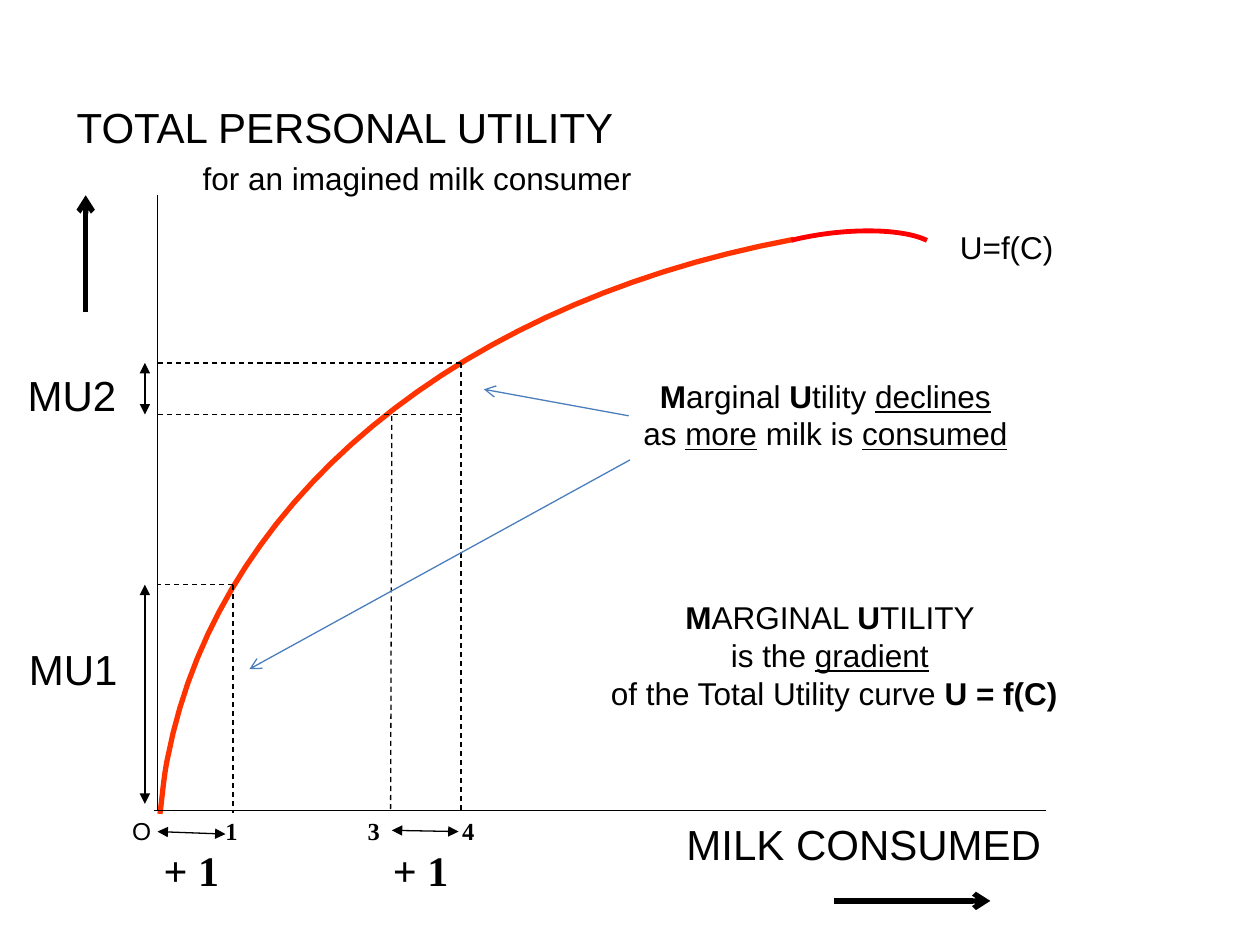
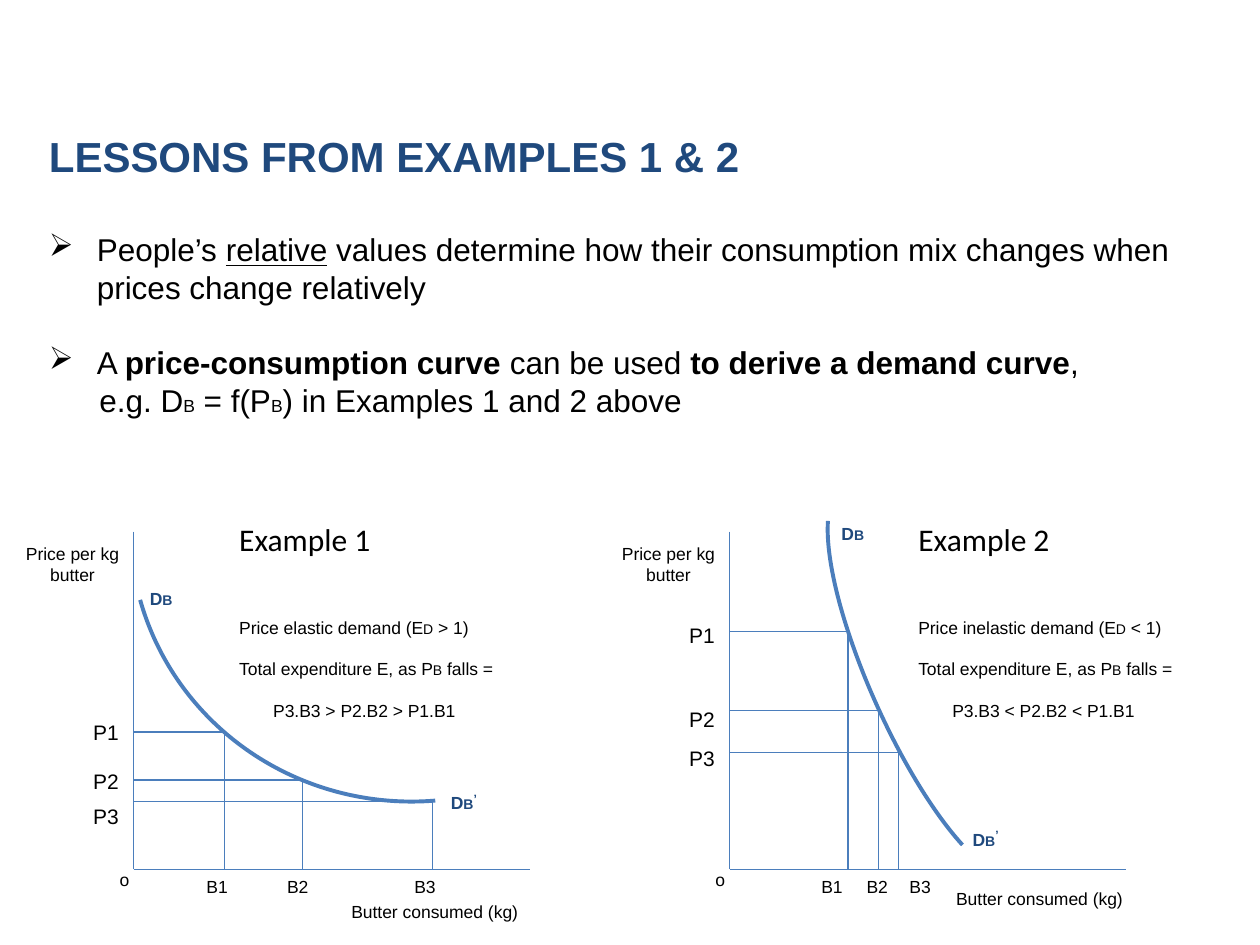
from lxml import etree
from pptx import Presentation
from pptx import util as u
from pptx.dml.color import RGBColor
from pptx.enum import dml, shapes, text
from pptx.oxml import ns

COLUMNS, ROWS = 100, 75
BLACK, NAVY, BLUE = "000000", "1F497D", "4B7EBC"
ORANGE, RED = "FF3300", "FF0000"
SERIF = "Times New Roman"
MARKS = "*_~^"


def color(value):
    return RGBColor.from_string(value)


def split_markup(markup):
    active, piece, pieces = set(), "", []
    for letter in markup:
        if letter in MARKS:
            if piece:
                pieces.append((piece, frozenset(active)))
            active ^= {letter}
            piece = ""
        else:
            piece += letter
    if piece:
        pieces.append((piece, frozenset(active)))
    return pieces


def bezier(start, first, second, end, steps=30):
    points = start, first, second, end
    for step in range(1, steps + 1):
        t = step / steps
        weights = (1 - t) ** 3, 3 * t * (1 - t) ** 2, 3 * t * t * (1 - t), t ** 3
        yield tuple(sum(w * p[axis] for w, p in zip(weights, points)) for axis in (0, 1))


class Canvas:
    def __init__(self, presentation):
        self.presentation = presentation
        self.column = presentation.slide_width / COLUMNS
        self.row = presentation.slide_height / ROWS
        self.font = "Arial"
        self.thin = 0.75
        self.slide = None

    def new_slide(self):
        self.slide = self.presentation.slides.add_slide(self.presentation.slide_layouts[6])

    def place(self, x, y):
        return round(x * self.column), round(y * self.row)

    def line(self, start, end, tint=BLACK, width=None, dashed=False, head=None, tail=None):
        connector = self.slide.shapes.add_connector(
            shapes.MSO_CONNECTOR.STRAIGHT, *self.place(*start), *self.place(*end))
        self.outline(connector, tint, width or self.thin)
        if dashed:
            connector.line.dash_style = dml.MSO_LINE.DASH
        properties = connector._element.spPr
        stroke = properties.find(ns.qn("a:ln"))
        for tag, kind in (("a:headEnd", head), ("a:tailEnd", tail)):
            if kind:
                etree.SubElement(stroke, ns.qn(tag), type=kind)
        etree.SubElement(properties, ns.qn("a:effectLst"))

    def outline(self, shape, tint, width):
        shape.line.color.rgb = color(tint)
        shape.line.width = u.Pt(width)

    def stroke_only(self, shape, tint, width):
        shape.shadow.inherit = False
        shape.fill.background()
        self.outline(shape, tint, width)

    def arc(self, x, y, wide, high, angles, rotation, tint, width, flipped=False):
        shape = self.slide.shapes.add_shape(
            shapes.MSO_SHAPE.ARC, *self.place(x, y), *self.place(wide, high))
        for index, angle in enumerate(angles):
            shape.adjustments[index] = angle * 0.6
        shape.rotation = rotation
        if flipped:
            shape._element.spPr.find(ns.qn("a:xfrm")).set("flipH", "1")
        self.stroke_only(shape, tint, width)

    def curve(self, start, segments, tint, width):
        builder = self.slide.shapes.build_freeform(*self.place(*start))
        for segment in segments:
            points = [self.place(*point) for point in bezier(start, *segment)]
            builder.add_line_segments(points, close=False)
            start = segment[-1]
        self.stroke_only(builder.convert_to_shape(), tint, width)

    def label(self, x, y, wide, high, *markups, size=10, small=8, tint=BLACK, font=None,
              bold=False, centered=False, wrap=False):
        box = self.slide.shapes.add_textbox(*self.place(x, y), *self.place(wide, high))
        frame = box.text_frame
        frame.word_wrap = wrap
        frame.auto_size = text.MSO_AUTO_SIZE.SHAPE_TO_FIT_TEXT
        for index, markup in enumerate(markups):
            paragraph = frame.add_paragraph() if index else frame.paragraphs[0]
            if centered:
                paragraph.alignment = text.PP_ALIGN.CENTER
            self.add_runs(paragraph, markup, size, small, tint, font or self.font, bold)
        return frame.paragraphs

    def add_runs(self, paragraph, markup, size, small, tint, font, bold):
        for piece, marks in split_markup(markup):
            run = paragraph.add_run()
            run.text = piece
            run.font.name = font
            run.font.size = u.Pt(small if "~" in marks else 12 if "^" in marks else size)
            run.font.bold = bold or "*" in marks
            run.font.underline = "_" in marks
            run.font.color.rgb = color(tint)
            if "^" in marks:
                run.font._element.set("baseline", "30000")

    def indent(self, paragraph, left, first=0, bullet=None):
        properties = paragraph._p.get_or_add_pPr()
        properties.set("marL", str(round(left * self.column)))
        properties.set("indent", str(round(first * self.column)))
        if bullet:
            etree.SubElement(properties, ns.qn("a:buChar"), char=bullet)


def draw_utility_slide(canvas):
    canvas.new_slide()
    axis_x, axis_y = 12.5, 64.3
    canvas.curve((12.7, 64.6), [((12.9, 63.1), (13, 61.6), (13.3, 60.2)),
                                ((17.2, 39.8), (36.2, 24), (63, 19))], ORANGE, 3)
    canvas.line((12.2, axis_y), (83, axis_y))
    canvas.line((axis_x, axis_y), (axis_x, 15.5))

    canvas.label(5.1, 7.6, 46.5, 5, "TOTAL PERSONAL UTILITY", size=24, wrap=True)
    canvas.label(15.1, 12.1, 38, 4, "for an imagined milk consumer", size=18, wrap=True)
    for x, y, wide, name in ((53.5, 64.5, 40, "MILK CONSUMED"),
                             (1.3, 50.6, 10.1, "MU1"), (1.2, 28.8, 10.1, "MU2")):
        canvas.label(x, y, wide, 5, name, size=24, wrap=True)
    for x in (12, 30.2):
        canvas.label(x, 66.5, 7.1, 5, "+ 1", size=24, font=SERIF, bold=True, wrap=True)
    canvas.label(9.5, 64.3, 3.5, 3.4, "O", size=14)
    for x, count in ((16.9, "1"), (28.2, "3"), (35.7, "4")):
        canvas.label(x, 64.3, 3, 3.3, count, size=14, font=SERIF, bold=True, wrap=True)

    for start, end in (((18.5, 46.4), (18.5, 64.5)), ((18.5, 46.4), (axis_x, 46.4)),
                       ((36.6, 28.8), (36.6, axis_y)), ((31.1, 33), (31, axis_y)),
                       ((36.6, 28.8), (axis_x, 28.8)), ((36.6, 32.9), (axis_x, 32.9))):
        canvas.line(start, end, dashed=True)
    for start, end in (((11.5, 28.8), (11.5, 32.9)), ((11.5, 46.4), (11.5, 63.8)),
                       ((12.5, 66), (17.9, 66.2)), ((31.1, 65.9), (36.4, 66))):
        canvas.line(start, end, head="triangle", tail="triangle")

    canvas.arc(57.7, 18.5, 16.9, 5.3, (218.9, 351.41), 353, RED, 2.75)
    canvas.line((66.2, 71.5), (78.6, 71.5), width=3, tail="arrow")
    canvas.line((6.8, 24.8), (6.8, 15.5), width=3, tail="arrow")
    canvas.label(47.3, 47, 37.8, 10.1, "*M*ARGINAL *U*TILITY ", "is the _gradient_ ",
                 "of the Total Utility curve *U = f(C)*", size=18, centered=True)
    canvas.label(75.2, 17.6, 9.5, 4, "U=f(C)", size=18)
    canvas.label(49.9, 29.4, 31.2, 7.1, "*M*arginal *U*tility _declines_",
                 "as _more_ milk is _consumed_", size=18, centered=True)
    canvas.line((49.9, 33), (38.4, 30.9), BLUE, tail="arrow")
    canvas.line((50, 36.5), (19.8, 53.1), BLUE, tail="arrow")


def draw_demand_graph(canvas, left, number, elasticity, relation, points, prices,
                      quantities, notes_x, curve_labels, consumed):
    base = 69
    canvas.line((left, 42.2), (left, base), BLUE)
    canvas.line((left, base), (left + 31.5, base), BLUE)
    for index, (x, y) in enumerate(points):
        canvas.line((x, y), (x, base), BLUE)
        canvas.line((x, y), (left, y), BLUE)
        canvas.label(left - 4.2, prices[index], 4.1, 3, f"P{index + 1}", size=12)
        canvas.label(quantities[index], base, 3.7, 2.7, f"B{index + 1}")
    canvas.label(notes_x, 40.8, 12.5, 4, f"Example {number}", size=18, font="Calibri")
    notes = canvas.label(notes_x, 48.5, 23, 9.4, f"Price {elasticity} demand (E~D~ {relation} 1)",
                         "Total expenditure E, as P~B~ falls =",
                         f"P3.B3 {relation} P2.B2 {relation} P1.B1")
    for paragraph in notes[1:]:
        paragraph.space_before = u.Pt(11.5)
    canvas.indent(notes[2], 2.7)
    canvas.label(left - 9.6, 42.6, 9.5, 4.4, "Price per kg", "butter", centered=True)
    canvas.label(left - 2.1, 68.5, 2.8, 2.7, "o")
    canvas.label(*consumed, 15.4, 2.7, "Butter consumed (kg)")
    for spot, wide, name in zip(curve_labels, (3.8, 4.2), ("D~B~", "D~B~^’^")):
        canvas.label(*spot, wide, 2.8, name, tint=NAVY, bold=True)


def draw_lessons_slide(canvas):
    canvas.new_slide()
    canvas.label(2.9, 9.9, 94.4, 5, "LESSONS FROM EXAMPLES 1 & 2",
                 size=24, tint=NAVY, bold=True, wrap=True)
    lessons = canvas.label(
        2.9, 17.8, 94.4, 16.3,
        "People’s _relative_ values determine how their consumption mix changes when "
        "prices change relatively",
        "A *price-consumption curve *can be used *to derive a demand curve*,",
        "e.g. D~B~ = f(P~B~) in Examples 1 and 2 above", size=18, small=10, wrap=True)
    lessons[1].space_before = u.Pt(21)
    for paragraph in lessons[:2]:
        canvas.indent(paragraph, 3.8, -3.8, "➢")
    canvas.indent(lessons[2], 0, 4)

    canvas.arc(10.3, 19.6, 45.1, 44, (275.18, 354.14), 170.4, BLUE, 2.25)
    canvas.arc(69.2, 37.5, 8.9, 33.3, (277.49, 77.67), 335.7, BLUE, 2.25, flipped=True)
    draw_demand_graph(canvas, 10.6, 1, "elastic", ">",
                      ((17.8, 58.1), (24, 61.9), (34.3, 63.6)), (56.6, 60.5, 63.3),
                      (15.4, 21.8, 31.9), 18, ((10.9, 46.2), (34.8, 62.1)), (26.9, 71))
    draw_demand_graph(canvas, 57.9, 2, "inelastic", "<",
                      ((67.3, 50.1), (69.7, 56.4), (71.3, 59.7)), (48.9, 55.6, 58.7),
                      (64.2, 67.8, 71.2), 71.9, ((65.8, 41), (76.2, 65)), (74.9, 70))


def main():
    presentation = Presentation()
    presentation.slide_width = u.Inches(10)
    presentation.slide_height = u.Inches(7.5)
    canvas = Canvas(presentation)
    draw_utility_slide(canvas)
    draw_lessons_slide(canvas)
    presentation.save("out.pptx")


if __name__ == "__main__":
    main()
